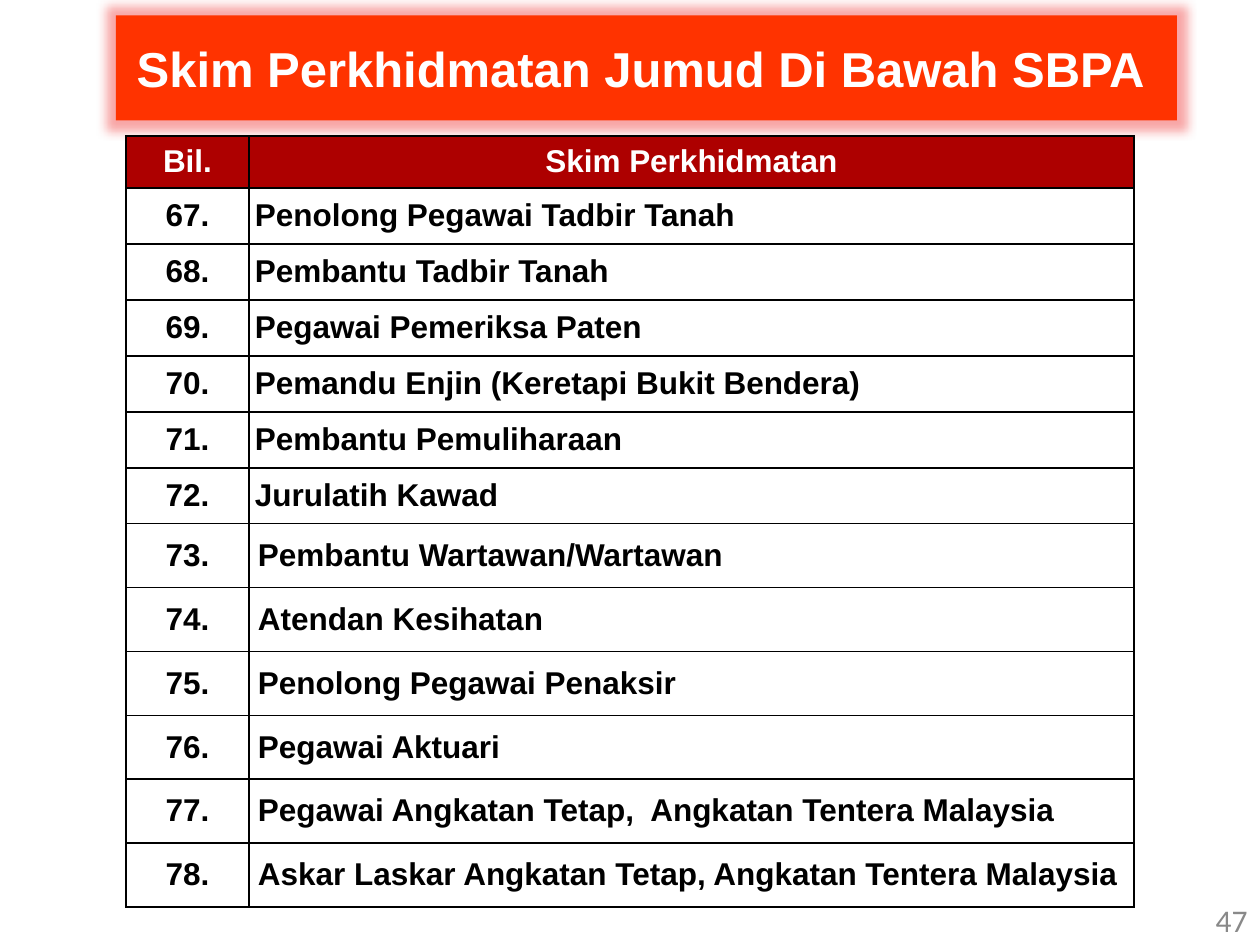
"""Build the slide listing schemes 67 to 78 as a bordered table."""
from lxml.etree import SubElement
from pptx import Presentation
from pptx.dml.color import RGBColor
from pptx.enum.text import MSO_ANCHOR as Anchor, MSO_AUTO_SIZE as AutoSize, PP_ALIGN as Align
from pptx.oxml import parse_xml
from pptx.oxml.ns import nsdecls, qn
from pptx.util import Emu, Pt

WHITE = RGBColor(0xFF, 0xFF, 0xFF)
BLACK = RGBColor(0, 0, 0)
GRAY = RGBColor(0x89, 0x89, 0x89)
DARK_RED = RGBColor(0xAD, 0, 0)
ORANGE_RED = RGBColor(0xFF, 0x33, 0)
GLOW_RED = RGBColor(0xEE, 0x22, 0x22)

PX = 914400 / 126
FIRST_NUMBER = 67
COMPACT_SCHEMES = [
    "Penolong Pegawai Tadbir Tanah",
    "Pembantu Tadbir Tanah",
    "Pegawai Pemeriksa Paten",
    "Pemandu Enjin (Keretapi Bukit Bendera)",
    "Pembantu Pemuliharaan",
    "Jurulatih Kawad",
]
ROOMY_SCHEMES = [
    "Pembantu Wartawan/Wartawan",
    "Atendan Kesihatan",
    "Penolong Pegawai Penaksir",
    "Pegawai Aktuari",
    "Pegawai Angkatan Tetap,  Angkatan Tentera Malaysia",
    "Askar Laskar Angkatan Tetap, Angkatan Tentera Malaysia",
]


def px(length):
    """Turn pixels into EMU."""
    return Emu(round(length * PX))


class SchemeSlide:
    """Holds the slide and its text style."""

    def __init__(self, deck, font="Arial", size=18):
        """Add a title-only slide to the deck."""
        self.slide = deck.slides.add_slide(deck.slide_layouts[5])
        self.font, self.size = font, size

    def set_text(self, frame, text, color, align, size=None, font=None, bold=True):
        """Fill a text frame with one styled paragraph."""
        frame.text = text
        paragraph = frame.paragraphs[0]
        paragraph.alignment = align
        style = paragraph.runs[0].font
        style.name, style.size = font or self.font, Pt(size or self.size)
        style.bold, style.color.rgb = bold, color

    def title(self, text, left, top, width, height):
        """Turn the title placeholder into a glowing banner."""
        banner = self.slide.shapes.title
        banner.left, banner.top = px(left), px(top)
        banner.width, banner.height = px(width), px(height)
        banner.fill.solid()
        banner.fill.fore_color.rgb = ORANGE_RED
        self.set_text(banner.text_frame, text, WHITE, Align.CENTER, size=28)
        banner.text_frame.auto_size = AutoSize.SHAPE_TO_FIT_TEXT
        banner.text_frame.vertical_anchor = Anchor.MIDDLE
        banner._element.spPr.append(parse_xml(
            f'<a:effectLst {nsdecls("a")}><a:glow rad="{px(20)}">'
            f'<a:srgbClr val="{GLOW_RED}"><a:alpha val="40000"/></a:srgbClr>'
            '</a:glow></a:effectLst>'))

    def cell(self, cell, text, fill, color, align, inset_x=13, inset_y=6):
        """Fill one cell with text, black borders and a plain colour."""
        cell.margin_left = cell.margin_right = px(inset_x)
        cell.margin_top = cell.margin_bottom = px(inset_y)
        cell.vertical_anchor = Anchor.MIDDLE
        properties = cell._tc.get_or_add_tcPr()
        for side in ("lnL", "lnR", "lnT", "lnB"):
            border = SubElement(properties, qn(f"a:{side}"), w=str(Pt(1)))
            line_fill = SubElement(border, qn("a:solidFill"))
            SubElement(line_fill, qn("a:srgbClr"), val=str(BLACK))
        cell.fill.solid()
        cell.fill.fore_color.rgb = fill
        self.set_text(cell.text_frame, text, color, align)

    def table(self, left, top, columns, header, rows):
        """Draw the table; each row is height, number, scheme and name insets."""
        heights = [header[0]] + [row[0] for row in rows]
        grid = self.slide.shapes.add_table(
            len(heights), len(columns), px(left), px(top),
            px(sum(columns)), px(sum(heights))).table
        for column, width in zip(grid.columns, columns):
            column.width = px(width)
        for line, height in zip(grid.rows, heights):
            line.height = px(height)
        for index, label in enumerate(header[1:]):
            self.cell(grid.cell(0, index), label, DARK_RED, WHITE, Align.CENTER)
        for index, (_, number, scheme, insets) in enumerate(rows, 1):
            self.cell(grid.cell(index, 0), number, WHITE, BLACK, Align.CENTER)
            self.cell(grid.cell(index, 1), scheme, WHITE, BLACK, Align.LEFT, *insets)

    def page_number(self, text, left, top, width, height):
        """Put the page number at the right of its box."""
        number = self.slide.shapes.add_textbox(px(left), px(top), px(width), px(height))
        number.text_frame.word_wrap = True
        number.text_frame.vertical_anchor = Anchor.MIDDLE
        self.set_text(number.text_frame, text, GRAY, Align.RIGHT, font="Calibri", bold=False)


def main():
    """Build and save the deck."""
    deck = Presentation()
    deck.slide_width, deck.slide_height = px(1260), px(945)
    page = SchemeSlide(deck)
    layouts = [(56, scheme, (6, 9)) for scheme in COMPACT_SCHEMES]
    layouts += [(63, scheme, (9, 13)) for scheme in ROOMY_SCHEMES]
    rows = [(height, f"{number}.", scheme, insets)
            for number, (height, scheme, insets) in enumerate(layouts, FIRST_NUMBER)]
    page.table(126, 136, (123, 885), (52, "Bil.", "Skim Perkhidmatan"), rows)
    page.title("Skim Perkhidmatan Jumud Di Bawah SBPA ", 116, 32, 1061, 72)
    page.page_number("47", 966, 895, 294, 50)
    deck.save("out.pptx")


if __name__ == "__main__":
    main()
